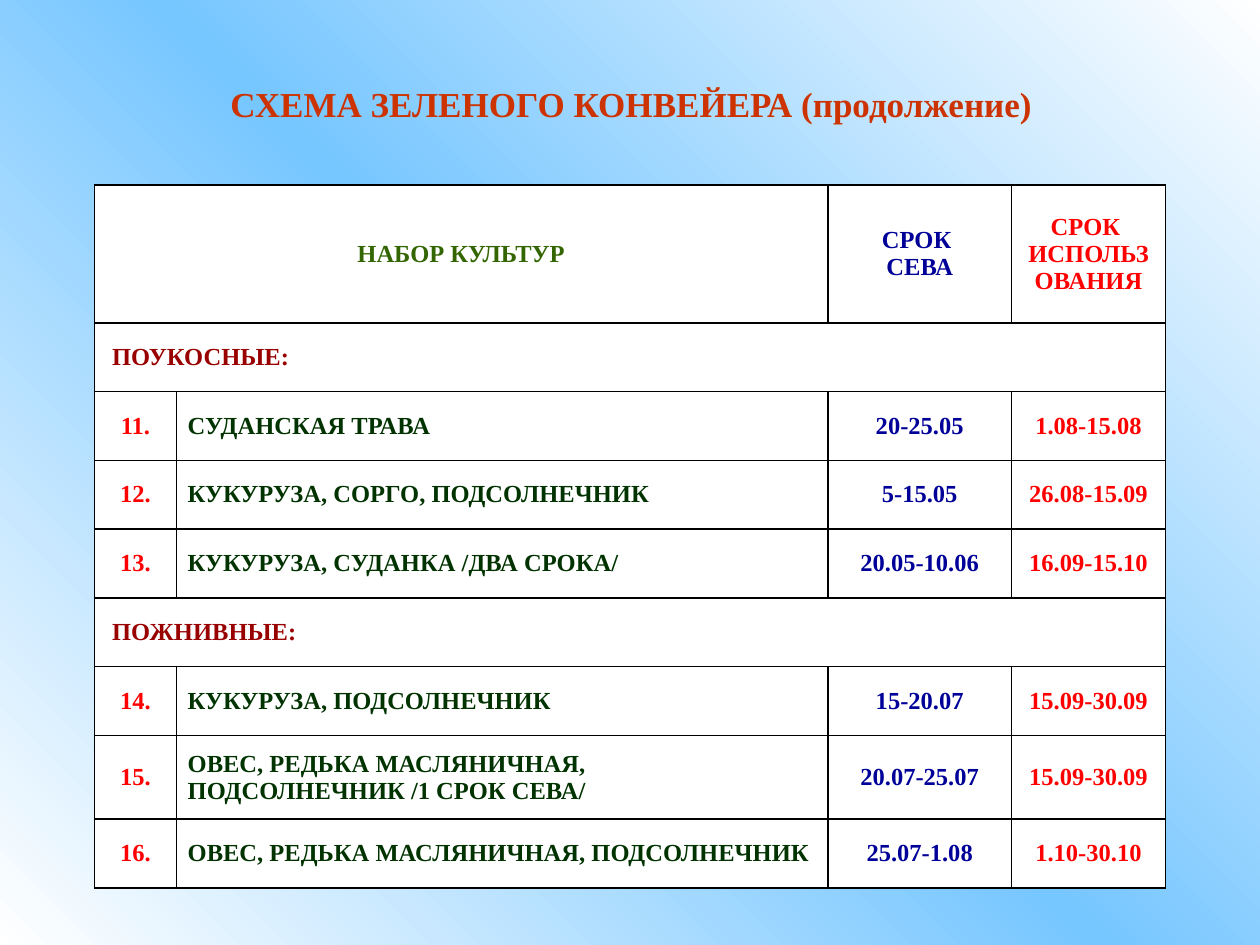
from copy import deepcopy
from dataclasses import dataclass
from lxml import etree
from pptx import Presentation, util as u
from pptx.dml.color import RGBColor
from pptx.enum import text
from pptx.oxml.ns import qn


@dataclass(frozen=True)
class Theme:
    face: str = "Times New Roman"
    head: int = 20
    body: int = 14
    white: str = "FFFFFF"
    sky: str = "76C6FF"
    rust: str = "CC3300"
    leaf: str = "336600"
    pine: str = "003300"
    navy: str = "000099"
    red: str = "FF0000"
    wine: str = "990000"
    line: str = "000000"


look = Theme()
LEFT, MID = text.PP_ALIGN.LEFT, text.PP_ALIGN.CENTER


def write(frame, words, color, size, align):
    frame.text = words
    for para in frame.paragraphs:
        para.alignment = align
        font = para.font
        font.name, font.size, font.bold = look.face, u.Pt(size), True
        font.color.rgb = RGBColor.from_string(color)


def border(cell):
    props = cell._tc.get_or_add_tcPr()
    for i, side in enumerate("LRTB"):
        line = etree.Element(qn(f"a:ln{side}"), w=str(u.Pt(1)))
        fill = etree.SubElement(line, qn("a:solidFill"))
        etree.SubElement(fill, qn("a:srgbClr"), val=look.line)
        props.insert(i, line)


deck = Presentation()
deck.slide_width, deck.slide_height = u.Inches(10), u.Inches(7.5)
wide, high = deck.slide_width, deck.slide_height
slide = deck.slides.add_slide(deck.slide_layouts[6])

# Background: a sky band between two white corners
back = slide.background.fill
back.gradient()
back.gradient_angle = 45
last = slide.element.findall(f".//{qn('a:gs')}")[-1]
last.addnext(deepcopy(last))
for i, (stop, color) in enumerate(
        zip(back.gradient_stops, (look.white, look.sky, look.white))):
    stop.position = i / 2
    stop.color.rgb = RGBColor.from_string(color)

# Title
title = slide.shapes.add_textbox(
    int(wide * 0.166), int(high * 0.08), int(wide * 0.67), int(high * 0.06))
frame = title.text_frame
frame.word_wrap = False
frame.vertical_anchor = text.MSO_ANCHOR.MIDDLE
write(frame, "СХЕМА ЗЕЛЕНОГО КОНВЕЙЕРА (продолжение)",
      look.rust, look.head, MID)

# Crop table: a one-item row is a section heading
rows = [
    ("НАБОР КУЛЬТУР", "", "СРОК \nСЕВА", "СРОК \nИСПОЛЬЗОВАНИЯ"),
    ("ПОУКОСНЫЕ:",),
    ("11.", "СУДАНСКАЯ ТРАВА", "20-25.05", "1.08-15.08"),
    ("12.", "КУКУРУЗА, СОРГО, ПОДСОЛНЕЧНИК", "5-15.05", "26.08-15.09"),
    ("13.", "КУКУРУЗА, СУДАНКА /ДВА СРОКА/", "20.05-10.06", "16.09-15.10"),
    ("ПОЖНИВНЫЕ:",),
    ("14.", "КУКУРУЗА, ПОДСОЛНЕЧНИК", "15-20.07", "15.09-30.09"),
    ("15.", "ОВЕС, РЕДЬКА МАСЛЯНИЧНАЯ, ПОДСОЛНЕЧНИК /1 СРОК СЕВА/",
     "20.07-25.07", "15.09-30.09"),
    ("16.", "ОВЕС, РЕДЬКА МАСЛЯНИЧНАЯ, ПОДСОЛНЕЧНИК",
     "25.07-1.08", "1.10-30.10"),
]
cols = (0.065, 0.517, 0.146, 0.122)
lines = (2, 1, 1, 1, 1, 1, 1, 1.22, 1)
colors = (look.red, look.pine, look.navy, look.red)
aligns = (MID, LEFT, MID, MID)
tall = high * 0.744
table = slide.shapes.add_table(
    len(rows), len(cols), int(wide * 0.075), int(high * 0.196),
    int(wide * sum(cols)), int(tall)).table
for col, share in zip(table.columns, cols):
    col.width = int(wide * share)
for row, share in zip(table.rows, lines):
    row.height = int(tall * share / sum(lines))

for r, row in enumerate(rows):
    for c in range(len(cols)):
        cell = table.cell(r, c)
        cell.fill.solid()
        cell.fill.fore_color.rgb = RGBColor.from_string(look.white)
        border(cell)
        cell.vertical_anchor = text.MSO_ANCHOR.MIDDLE
        cell.margin_left = cell.margin_right = u.Inches(0.09)
        cell.margin_top = cell.margin_bottom = u.Inches(0.05)
    for c, words in enumerate(row):
        cell = table.cell(r, c)
        color, align = colors[c], aligns[c]
        if len(row) == 1:
            color, align = look.wine, LEFT
            cell.margin_left = u.Inches(0.14)
            cell.merge(table.cell(r, len(cols) - 1))
        elif r == 0 and c == 0:
            color = look.leaf
            cell.merge(table.cell(0, 1))
        if words:
            write(cell.text_frame, words, color, look.body, align)

deck.save("out.pptx")
